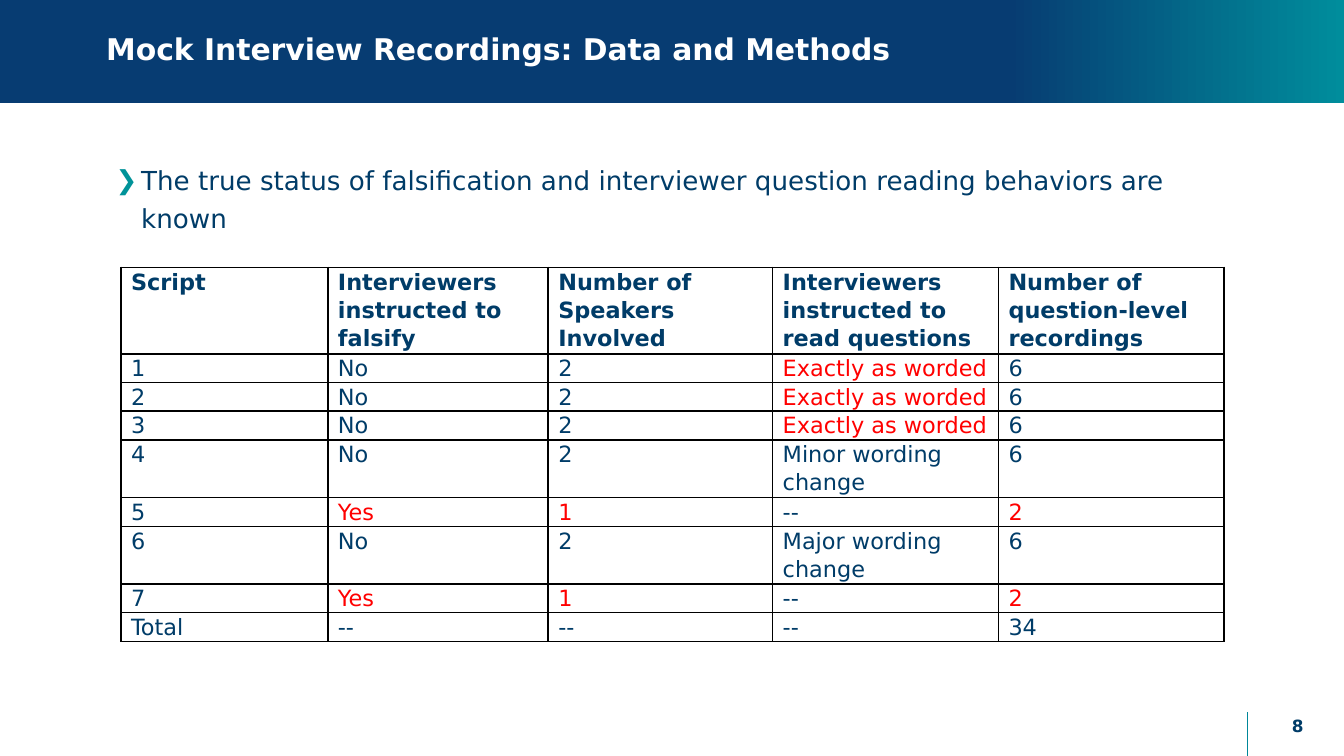
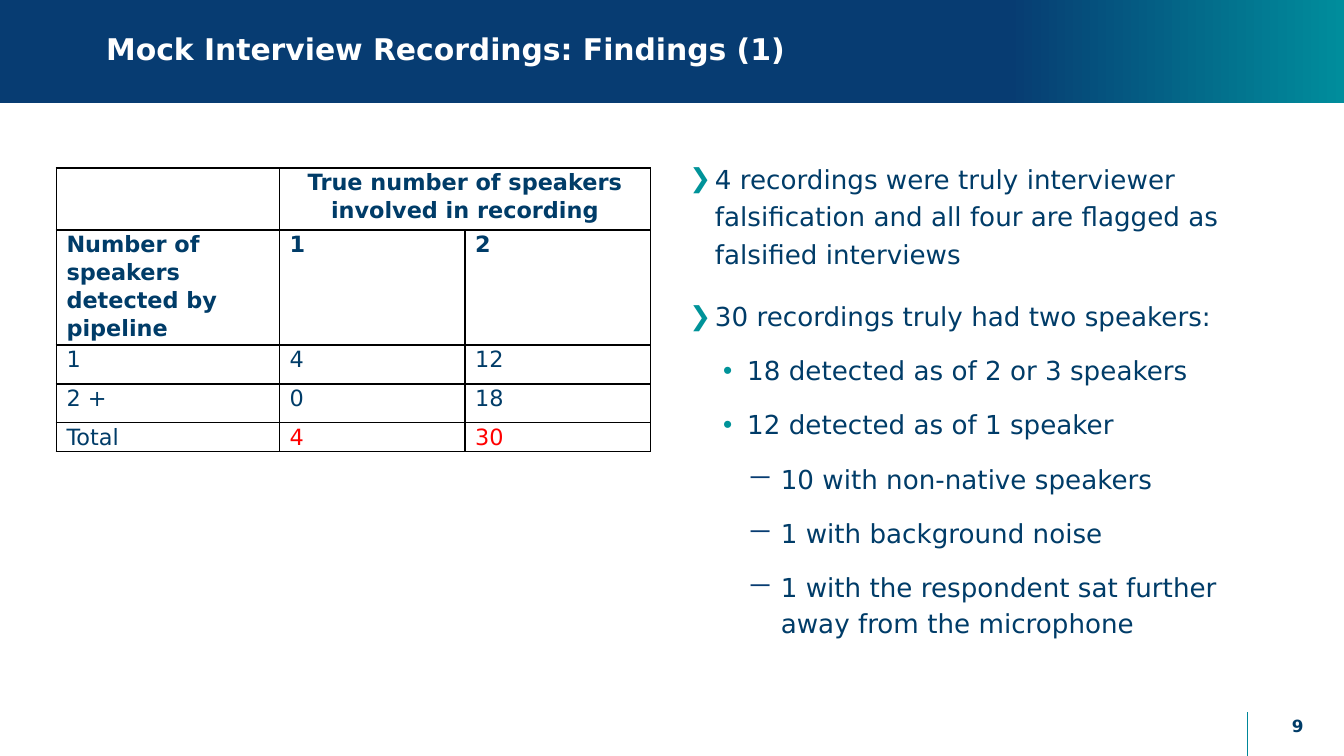
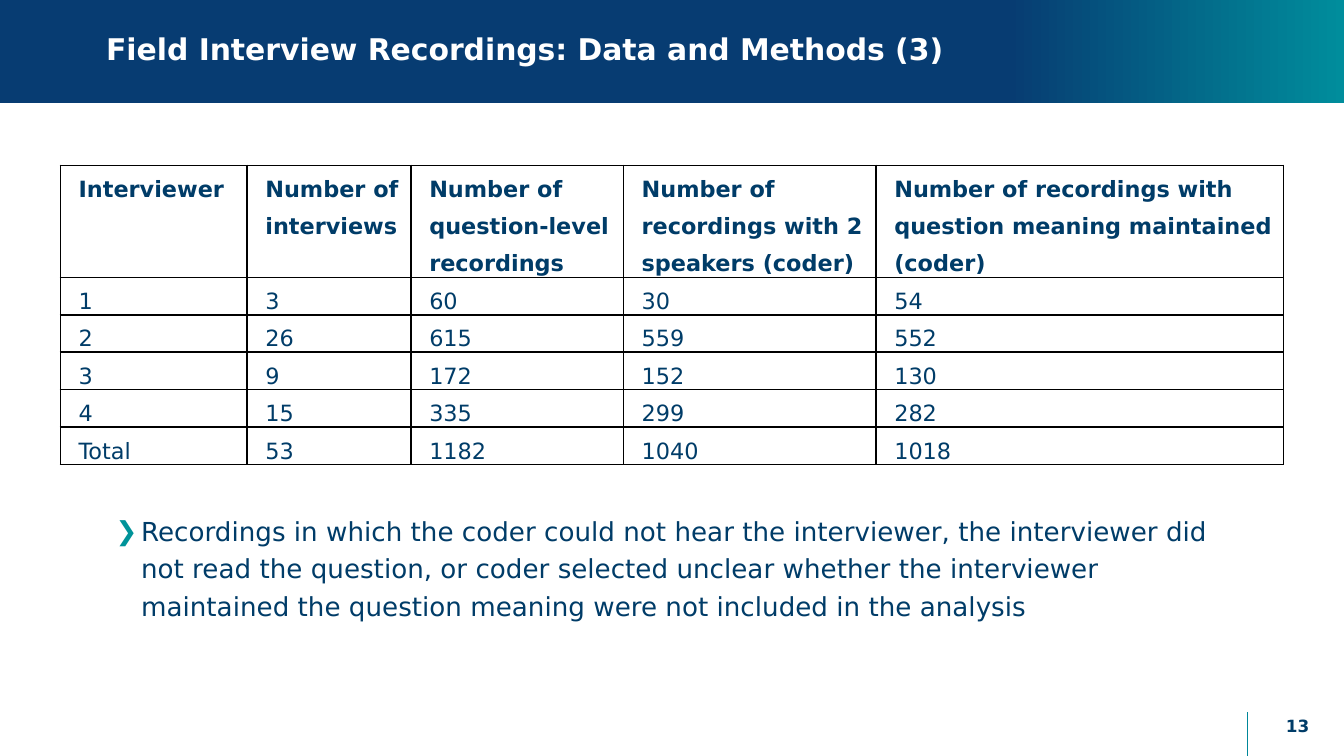
from copy import deepcopy
from dataclasses import dataclass

from lxml.etree import SubElement
from pptx import Presentation
from pptx.dml.color import RGBColor
from pptx.enum.shapes import MSO_CONNECTOR, MSO_SHAPE
from pptx.enum.text import MSO_ANCHOR, MSO_AUTO_SIZE, PP_ALIGN
from pptx.oxml.ns import qn
from pptx.util import Inches, Pt


@dataclass(frozen=True)
class Theme:
    font: str = "DejaVu Sans"
    navy: str = "073C72"
    teal: str = "008D9C"
    rule: str = "008799"
    bullet: str = "009399"
    text: str = "003C68"
    alert: str = "FF0000"
    white: str = "FFFFFF"
    border: str = "000000"
    title_size: float = 16
    body_size: float = 14
    table_size: float = 12
    number_size: float = 9


THEME = Theme()
SLIDE_WIDTH = Inches(10)
SLIDE_HEIGHT = SLIDE_WIDTH * 9 // 16

BULLETS = [
    {"left": 0.26, "hanging": 0.19, "spacing": 20, "before": 7.5, "char": "❯", "color": THEME.bullet},
    {"left": 0.5, "hanging": 0.18, "spacing": 19.2, "before": 3.8, "char": "•", "color": THEME.bullet},
    {"left": 0.75, "hanging": 0.25, "spacing": 19.2, "before": 3.8, "char": "－", "color": THEME.navy},
]

SCRIPT_ROWS = [
    ["Script", "Interviewers instructed to falsify", "Number of Speakers Involved",
     "Interviewers instructed to read questions", "Number of question-level recordings"],
    ["1", "No", "2", "Exactly as worded", "6"],
    ["2", "No", "2", "Exactly as worded", "6"],
    ["3", "No", "2", "Exactly as worded", "6"],
    ["4", "No", "2", "Minor wording change", "6"],
    ["5", "Yes", "1", "--", "2"],
    ["6", "No", "2", "Major wording change", "6"],
    ["7", "Yes", "1", "--", "2"],
    ["Total", "--", "--", "--", "34"],
]
SCRIPT_ALERTS = {(row, 3) for row in (1, 2, 3)} | {(row, column) for row in (5, 7) for column in (1, 2, 4)}

SPEAKER_ROWS = [
    ["", "True number of speakers involved in recording", ""],
    ["Number of speakers detected by pipeline", "1", "2"],
    ["1", "4", "12"],
    ["2 +", "0", "18"],
    ["Total", "4", "30"],
]

INTERVIEWER_ROWS = [
    ["Interviewer", "Number of interviews", "Number of question-level recordings",
     "Number of recordings with 2 speakers (coder)",
     "Number of recordings with question meaning maintained (coder)"],
    ["1", "3", "60", "30", "54"],
    ["2", "26", "615", "559", "552"],
    ["3", "9", "172", "152", "130"],
    ["4", "15", "335", "299", "282"],
    ["Total", "53", "1182", "1040", "1018"],
]


def apply_format(target, values):
    for name, value in values.items():
        setattr(target, name, value)


def place(shape, left, top, width, height):
    apply_format(shape, {"left": Inches(left), "top": Inches(top),
                         "width": Inches(width), "height": Inches(height)})


def write(paragraph, text, size, color=THEME.text, bold=False):
    run = paragraph.add_run()
    run.text = text
    apply_format(run.font, {"name": THEME.font, "size": Pt(size), "bold": bold})
    run.font.color.rgb = RGBColor.from_string(color)


def indent(paragraph, left, hanging=0):
    properties = paragraph._p.get_or_add_pPr()
    properties.set("marL", str(Inches(left)))
    properties.set("indent", str(-Inches(hanging)))
    return properties


def add_band(slide):
    band = slide.shapes.add_shape(MSO_SHAPE.RECTANGLE, 0, 0, SLIDE_WIDTH, Inches(0.77))
    band.shadow.inherit = False
    band.line.fill.background()
    band.fill.gradient()
    band.fill.gradient_angle = 0
    start, end = band.fill.gradient_stops
    for stop, position, color in ((start, 0, THEME.navy), (end, 1, THEME.teal)):
        stop.position = position
        stop.color.rgb = RGBColor.from_string(color)
    stops = band.element.find(".//" + qn("a:gsLst"))
    middle = deepcopy(stops[0])
    middle.set("pos", "75000")
    stops.insert(1, middle)
    slide.shapes.title.element.addprevious(band.element)


def add_footer(slide, number):
    rule = slide.shapes.add_connector(
        MSO_CONNECTOR.STRAIGHT, Inches(9.28), Inches(5.3), Inches(9.28), SLIDE_HEIGHT)
    rule.line.color.rgb = RGBColor.from_string(THEME.rule)
    rule.line.width = Pt(0.75)
    SubElement(rule.element.spPr, qn("a:effectLst"))
    box = slide.shapes.add_textbox(Inches(9.31), Inches(5.25), Inches(0.69), Inches(0.3))
    apply_format(box.text_frame, {"word_wrap": True, "vertical_anchor": MSO_ANCHOR.MIDDLE})
    paragraph = box.text_frame.paragraphs[0]
    paragraph.alignment = PP_ALIGN.CENTER
    write(paragraph, str(number), THEME.number_size, bold=True)


def add_content_slide(presentation, title, number):
    slide = presentation.slides.add_slide(presentation.slide_layouts[1])
    add_band(slide)
    add_footer(slide, number)
    place(slide.shapes.title, 0.69, 0, 8.15, 0.76)
    frame = slide.shapes.title.text_frame
    apply_format(frame, {"auto_size": MSO_AUTO_SIZE.NONE, "vertical_anchor": MSO_ANCHOR.MIDDLE})
    paragraph = frame.paragraphs[0]
    apply_format(paragraph, {"alignment": PP_ALIGN.LEFT, "line_spacing": 0.9})
    write(paragraph, title, THEME.title_size, THEME.white, True)
    return slide


def fill_body(slide, position, items):
    body = slide.placeholders[1]
    place(body, *position)
    frame = body.text_frame
    apply_format(frame, {"auto_size": MSO_AUTO_SIZE.NONE, "vertical_anchor": MSO_ANCHOR.TOP})
    for index, (level, text) in enumerate(items):
        paragraph = frame.add_paragraph() if index else frame.paragraphs[0]
        style = BULLETS[level]
        properties = indent(paragraph, style["left"], style["hanging"])
        color = SubElement(properties, qn("a:buClr"))
        SubElement(color, qn("a:srgbClr"), val=style["color"])
        SubElement(properties, qn("a:buChar"), char=style["char"])
        apply_format(paragraph, {
            "level": level,
            "line_spacing": Pt(style["spacing"]),
            "space_before": Pt(style["before"] if index else 0),
            "space_after": Pt(6),
        })
        write(paragraph, text, THEME.body_size)


def format_cell(cell):
    apply_format(cell, {"margin_left": Pt(5.4), "margin_right": Pt(5.4),
                        "margin_top": 0, "margin_bottom": 0})
    properties = cell._tc.get_or_add_tcPr()
    for side in ("lnL", "lnR", "lnT", "lnB"):
        line = SubElement(properties, qn("a:" + side), w=str(Pt(1)))
        fill = SubElement(line, qn("a:solidFill"))
        SubElement(fill, qn("a:srgbClr"), val=THEME.border)
    cell.fill.background()


def add_grid(slide, position, widths, heights, rows, alerts=(), header_rows=1,
             line_spacing=1.07, text_indent=0):
    frame = slide.shapes.add_table(len(rows), len(widths), *map(Inches, position))
    table = frame.table
    apply_format(table, {"first_row": False, "horz_banding": False})
    for column, width in zip(table.columns, widths):
        column.width = Inches(width)
    for row, height in zip(table.rows, heights):
        row.height = Inches(height)
    place(frame, *position)
    for row_index, values in enumerate(rows):
        for column_index, text in enumerate(values):
            cell = table.cell(row_index, column_index)
            format_cell(cell)
            if not text:
                continue
            paragraph = cell.text_frame.paragraphs[0]
            indent(paragraph, text_indent)
            paragraph.line_spacing = line_spacing
            color = THEME.alert if (row_index, column_index) in alerts else THEME.text
            write(paragraph, text, THEME.table_size, color, row_index < header_rows)
    return table


def build_mock_methods(presentation):
    slide = add_content_slide(presentation, "Mock Interview Recordings: Data and Methods", 8)
    fill_body(slide, (0.69, 1.13, 8.62, 0.5), [
        (0, "The true status of falsification and interviewer question reading behaviors are known"),
    ])
    add_grid(slide, (0.9, 1.99, 8.21, 2.61), [1.54, 1.64, 1.67, 1.68, 1.68],
             [0] * len(SCRIPT_ROWS), SCRIPT_ROWS, SCRIPT_ALERTS)


def build_mock_findings(presentation):
    slide = add_content_slide(presentation, "Mock Interview Recordings: Findings (1)", 9)
    fill_body(slide, (4.96, 1.12, 4.7, 2.38), [
        (0, "4 recordings were truly interviewer falsification and all four are flagged as falsified interviews"),
        (0, "30 recordings truly had two speakers:"),
        (1, "18 detected as of 2 or 3 speakers"),
        (1, "12 detected as of 1 speaker"),
        (2, "10 with non-native speakers"),
        (2, "1 with background noise"),
        (2, "1 with the respondent sat further away from the microphone"),
    ])
    table = add_grid(slide, (0.42, 1.25, 4.41, 2.08), [1.66, 1.38, 1.38], [0.46, 0.48, 0.29, 0.29, 0],
                     SPEAKER_ROWS, {(4, 1), (4, 2)}, header_rows=2)
    heading = table.cell(0, 1)
    heading.merge(table.cell(0, 2))
    heading.text_frame.paragraphs[0].alignment = PP_ALIGN.CENTER


def build_field_methods(presentation):
    slide = add_content_slide(presentation, "Field Interview Recordings: Data and Methods (3)", 13)
    fill_body(slide, (0.69, 3.74, 8.62, 1.39), [
        (0, "Recordings in which the coder could not hear the interviewer, the interviewer did not read "
            "the question, or coder selected unclear whether the interviewer maintained the question "
            "meaning were not included in the analysis"),
    ])
    add_grid(slide, (0.45, 1.23, 9.11, 2.01), [1.39, 1.22, 1.58, 1.88, 3.03], [0.55] + [0.18] * 5,
             INTERVIEWER_ROWS, line_spacing=Pt(20), text_indent=0.06)


def main():
    presentation = Presentation()
    apply_format(presentation, {"slide_width": SLIDE_WIDTH, "slide_height": SLIDE_HEIGHT})
    build_mock_methods(presentation)
    build_mock_findings(presentation)
    build_field_methods(presentation)
    presentation.save("out.pptx")


if __name__ == "__main__":
    main()
